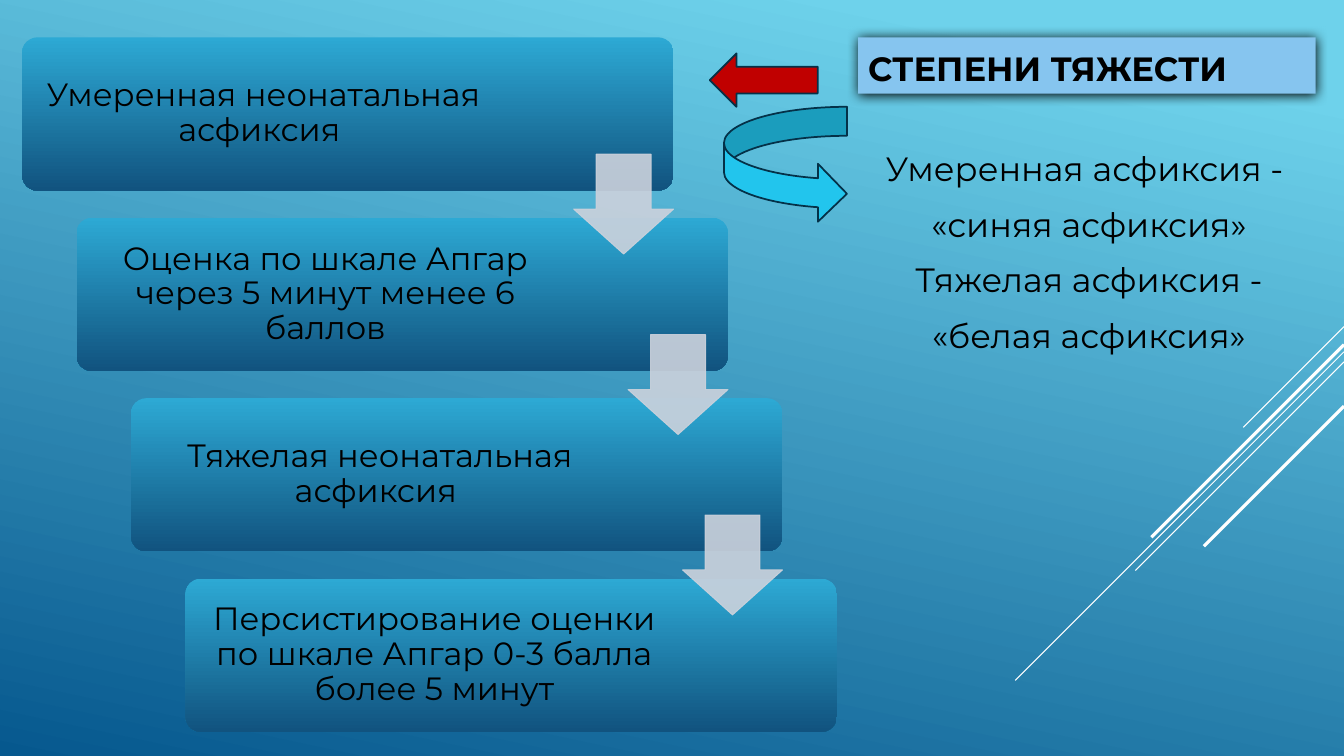
from lxml import etree
from pptx import Presentation
from pptx.dml.color import RGBColor
from pptx.enum.shapes import MSO_CONNECTOR, MSO_SHAPE
from pptx.enum.text import MSO_ANCHOR, MSO_AUTO_SIZE, PP_ALIGN
from pptx.oxml.ns import qn
from pptx.util import Inches, Pt

ROUND_RECT = MSO_SHAPE.ROUNDED_RECTANGLE
DOWN_ARROW = MSO_SHAPE.DOWN_ARROW
LEFT_ARROW = MSO_SHAPE.LEFT_ARROW
CURVED_ARROW = MSO_SHAPE.CURVED_RIGHT_ARROW
STRAIGHT = MSO_CONNECTOR.STRAIGHT
TOP, MIDDLE, BOTTOM = MSO_ANCHOR.TOP, MSO_ANCHOR.MIDDLE, MSO_ANCHOR.BOTTOM
LEFT, CENTER = PP_ALIGN.LEFT, PP_ALIGN.CENTER

BLACK = RGBColor(0x00, 0x00, 0x00)
WHITE = RGBColor(0xFF, 0xFF, 0xFF)
SKY = RGBColor(0x6E, 0xD2, 0xEB)
DEEP = RGBColor(0x06, 0x58, 0x8E)
CARD_TOP = RGBColor(0x2D, 0xA9, 0xD4)
CARD_BOTTOM = RGBColor(0x11, 0x53, 0x7F)
TITLE_FILL = RGBColor(0x86, 0xC5, 0xEF)
STEP_ARROW = RGBColor(0xCC, 0xD2, 0xDC)
RED = RGBColor(0xC0, 0x00, 0x00)
CYAN = RGBColor(0x22, 0xC5, 0xED)
OUTLINE = RGBColor(0x04, 0x31, 0x48)

FONT = "Montserrat"
SLIDE_W, SLIDE_H = 13.33, 7.5

# Staircase grid: each card is one step right and one step down
CARD_X, CARD_Y, CARD_W, CARD_H = 0.22, 0.37, 6.46, 1.52
STEP_X, STEP_Y = 0.54, 1.79
CARD_PAD = 0.05
ARROW_SIZE = 0.99
ARROW_DROP = 1.16

# Card text and the width of its text area
CARDS = [
    ("Умеренная неонатальная асфиксия ", 4.69),
    ("Оценка по шкале Апгар через 5 минут менее 6 баллов", 4.84),
    ("Тяжелая неонатальная асфиксия ", 4.84),
    ("Персистирование оценки по шкале Апгар 0-3 балла более 5 минут", 4.84),
]
TYPES = ["Умеренная асфиксия - ", "«синяя асфиксия»",
         "Тяжелая асфиксия -", "«белая асфиксия»"]

# Diagonal rays from the right edge: start height, length, weight
RAYS = [(3.24, 1.0, 0.75), (3.49, 3.26, 0.75), (3.59, 2.07, 0.75),
        (3.42, 1.91, 2.25), (4.03, 1.39, 2.25)]


def box(x, y, w, h):
    return Inches(x), Inches(y), Inches(w), Inches(h)


def fill_gradient(fill, first, last, clockwise, start=0):
    fill.gradient()
    fill.gradient_angle = 360 - clockwise
    for stop, color, position in zip(fill.gradient_stops, (first, last), (start, 1)):
        stop.color.rgb = color
        stop.position = position


def set_alpha(color_format_parent, percent):
    for clr in color_format_parent.iter(qn("a:srgbClr")):
        etree.SubElement(clr, qn("a:alpha"), val=str(percent * 1000))


def add_shadow(sp):
    effects = etree.SubElement(sp._element.spPr, qn("a:effectLst"))
    shadow = etree.SubElement(effects, qn("a:outerShdw"), blurRad=str(Pt(8.5)),
                              dist=str(Pt(1)), dir="5400000", rotWithShape="0")
    etree.SubElement(shadow, qn("a:srgbClr"), val=str(BLACK))


def write_text(tf, lines, size, anchor, align=CENTER, bold=False,
               spacing=1.0, before=0, after=0):
    tf.word_wrap = True
    tf.auto_size = MSO_AUTO_SIZE.NONE
    tf.vertical_anchor = anchor
    tf.text = "\n".join(lines)
    for p in tf.paragraphs:
        p.alignment = align
        p.line_spacing = spacing
        p.space_before, p.space_after = Pt(before), Pt(after)
        for r in p.runs:
            r.font.name, r.font.size, r.font.bold = FONT, Pt(size), bold
            r.font.color.rgb = BLACK


def add_ray(slide, y, length, weight):
    line = slide.shapes.add_connector(
        STRAIGHT, Inches(SLIDE_W), Inches(y),
        Inches(SLIDE_W - length), Inches(y + length))
    line.line.color.rgb = WHITE
    line.line.width = Pt(weight)
    etree.SubElement(line._element.spPr, qn("a:effectLst"))


def add_arrow(slide, kind, place, color, outline, weight):
    sp = slide.shapes.add_shape(kind, *box(*place))
    sp.shadow.inherit = False
    sp.fill.solid()
    sp.fill.fore_color.rgb = color
    sp.line.color.rgb = outline
    sp.line.width = Pt(weight)
    return sp


def add_card(slide, step, text, text_w):
    x, y = CARD_X + step * STEP_X, CARD_Y + step * STEP_Y
    sp = slide.shapes.add_shape(ROUND_RECT, *box(x, y, CARD_W, CARD_H))
    sp.adjustments[0] = 0.1
    sp.shadow.inherit = False
    sp.line.fill.background()
    fill_gradient(sp.fill, CARD_TOP, CARD_BOTTOM, 90)
    label = slide.shapes.add_textbox(
        *box(x + CARD_PAD, y + CARD_PAD, text_w, CARD_H - 2 * CARD_PAD))
    tf = label.text_frame
    tf.margin_left = tf.margin_right = Inches(0.1)
    tf.margin_top = tf.margin_bottom = Inches(0.1)
    write_text(tf, [text], 23, MIDDLE, spacing=0.9, after=8)


def add_step_arrow(slide, step):
    x = CARD_X + CARD_W - ARROW_SIZE + step * STEP_X
    y = CARD_Y + ARROW_DROP + step * STEP_Y
    sp = add_arrow(slide, DOWN_ARROW, (x, y, ARROW_SIZE, ARROW_SIZE),
                   STEP_ARROW, STEP_ARROW, 0.75)
    sp.adjustments[0], sp.adjustments[1] = 0.55, 0.45
    set_alpha(sp._element.spPr, 90)


def format_title(title):
    title.left, title.top, title.width, title.height = box(8.51, 0.37, 4.54, 0.56)
    title.fill.solid()
    title.fill.fore_color.rgb = TITLE_FILL
    add_shadow(title)
    write_text(title.text_frame, ["СТЕПЕНИ ТЯЖЕСТИ"], 24, BOTTOM, LEFT,
               bold=True, spacing=Pt(17.2))


def main():
    prs = Presentation()
    prs.slide_width, prs.slide_height = Inches(SLIDE_W), Inches(SLIDE_H)
    slide = prs.slides.add_slide(prs.slide_layouts[5])

    # Background and rays
    fill_gradient(slide.background.fill, SKY, DEEP, 102, start=0.1)
    for ray in RAYS:
        add_ray(slide, *ray)

    # Title and the two types of asphyxia
    format_title(slide.shapes.title)
    types = slide.shapes.add_textbox(*box(8.44, 1.42, 4.72, 3.95))
    write_text(types.text_frame, TYPES, 24, TOP, before=4.8, after=6)

    # Staircase of cards, then the arrows between them
    for step, (text, text_w) in enumerate(CARDS):
        add_card(slide, step, text, text_w)
    for step in range(len(CARDS) - 1):
        add_step_arrow(slide, step)

    # Arrows from the title to the cards and back to the types
    add_arrow(slide, LEFT_ARROW, (7.04, 0.53, 1.07, 0.53), RED, OUTLINE, 1.25)
    add_arrow(slide, CURVED_ARROW, (7.18, 1.06, 1.22, 1.15), CYAN, OUTLINE, 1.25)

    prs.save("out.pptx")


if __name__ == "__main__":
    main()
